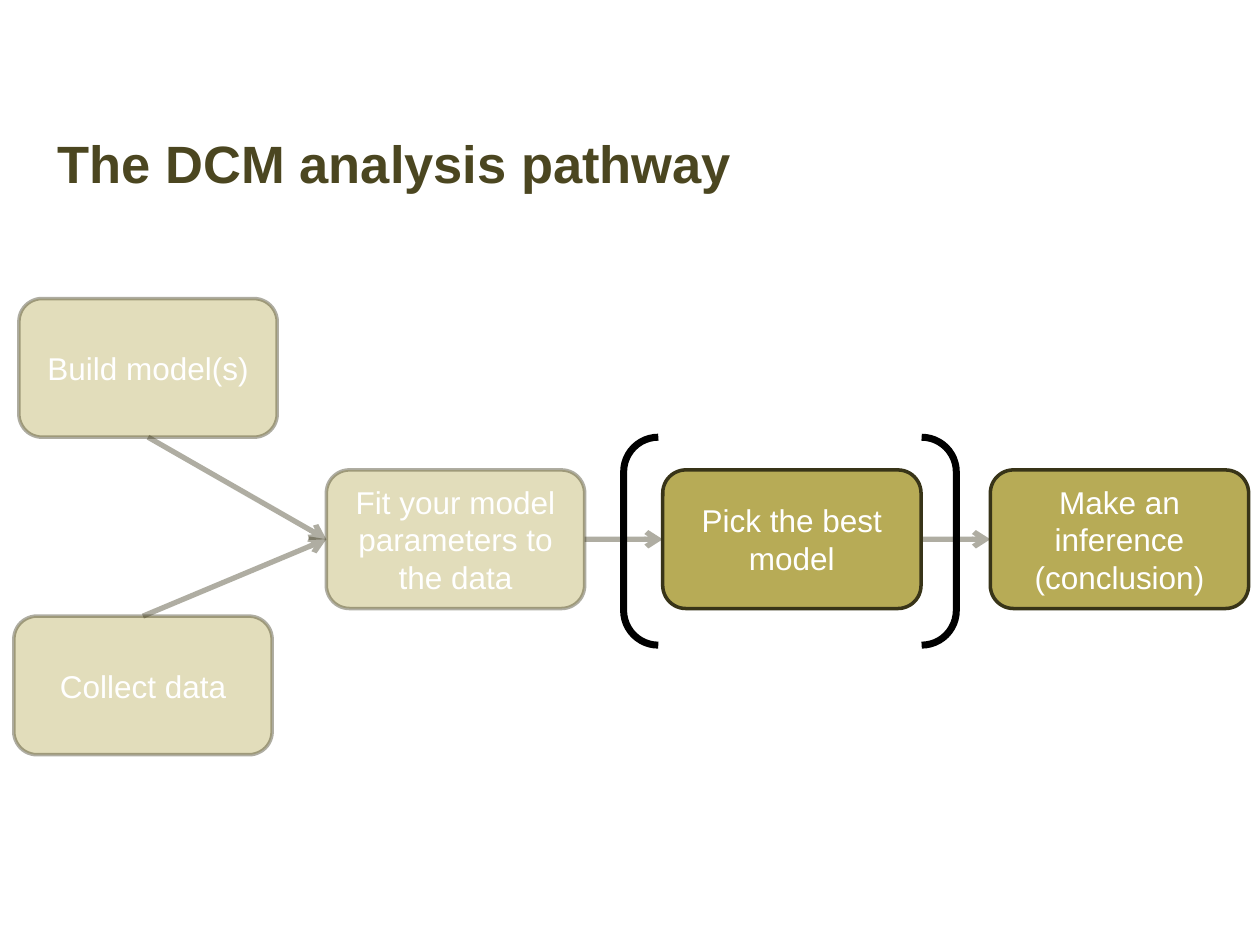
from lxml.etree import SubElement
from pptx import Presentation
from pptx.dml.color import RGBColor
from pptx.enum.shapes import MSO_CONNECTOR as Connector, MSO_SHAPE as Shape
from pptx.enum.text import MSO_ANCHOR as Anchor, PP_ALIGN as Align
from pptx.oxml.ns import qn
from pptx.util import Inches, Pt

TITLE = "The DCM analysis pathway"
COLORS = {"step": "B7AB56", "outline": "383418", "title": "4B4620",
          "text": "FFFFFF", "bracket": "000000"}
FONT = "Arial"
FADED = 40
STEP_WIDTH, STEP_HEIGHT = 2.05, 1.1
STEPS = {
    "collect": ("Collect data", 0.11, 4.89, True),
    "build": ("Build model(s)", 0.15, 2.37, True),
    "fit": ("Fit your model parameters to the data", 2.59, 3.73, True),
    "pick": ("Pick the best model", 5.26, 3.73, False),
    "infer": ("Make an inference (conclusion)", 7.86, 3.73, False),
}
TOP, LEFT, BOTTOM, RIGHT = range(4)
ARROWS = [("collect", TOP, "fit"), ("build", BOTTOM, "fit"),
          ("pick", RIGHT, "infer"), ("fit", RIGHT, "pick")]
BRACKET = (4.95, 3.47, 2.64, 1.65)


def rgb(name):
    return RGBColor.from_string(COLORS[name])


def fade(shape):
    for color in shape._element.spPr.iter(qn("a:srgbClr")):
        SubElement(color, qn("a:alpha"), val=str(FADED * 1000))


def set_line(shape, color, width):
    shape.line.color.rgb = rgb(color)
    shape.line.width = Pt(width)


def set_font(paragraph, size, color, bold=False):
    for run in paragraph.runs:
        run.font.name = FONT
        run.font.size = Pt(size)
        run.font.bold = bold
        run.font.color.rgb = rgb(color)


def add_title(slide):
    title = slide.shapes.title
    title.left, title.top = Inches(0.36), Inches(0.99)
    title.width, title.height = Inches(9.28), Inches(1.42)
    text_frame = title.text_frame
    text_frame.text = TITLE
    text_frame.vertical_anchor = Anchor.TOP
    paragraph = text_frame.paragraphs[0]
    paragraph.alignment = Align.LEFT
    set_font(paragraph, 30, "title", True)


def add_step(slide, text, left, top, faded):
    shape = slide.shapes.add_shape(
        Shape.ROUNDED_RECTANGLE, Inches(left), Inches(top),
        Inches(STEP_WIDTH), Inches(STEP_HEIGHT))
    shape.shadow.inherit = False
    shape.fill.solid()
    shape.fill.fore_color.rgb = rgb("step")
    set_line(shape, "outline", 2)
    if faded:
        fade(shape)
    text_frame = shape.text_frame
    text_frame.text = text
    text_frame.word_wrap = True
    text_frame.vertical_anchor = Anchor.MIDDLE
    paragraph = text_frame.paragraphs[0]
    paragraph.alignment = Align.CENTER
    set_font(paragraph, 18, "text")
    return shape


def add_arrow(slide, start, side, end):
    arrow = slide.shapes.add_connector(Connector.STRAIGHT, 0, 0, 0, 0)
    arrow.begin_connect(start, side)
    arrow.end_connect(end, LEFT)
    set_line(arrow, "outline", 3)
    fade(arrow)
    SubElement(arrow.line._get_or_add_ln(), qn("a:tailEnd"), type="arrow")
    SubElement(arrow._element.spPr, qn("a:effectLst"))


def add_bracket(slide):
    bracket = slide.shapes.add_shape(
        Shape.DOUBLE_BRACKET, *(Inches(length) for length in BRACKET))
    bracket.shadow.inherit = False
    bracket.fill.background()
    set_line(bracket, "bracket", 4)


def main():
    presentation = Presentation()
    presentation.slide_width, presentation.slide_height = Inches(10), Inches(7.5)
    slide = presentation.slides.add_slide(presentation.slide_layouts[5])
    add_title(slide)
    steps = {name: add_step(slide, *step) for name, step in STEPS.items()}
    for start, side, end in ARROWS:
        add_arrow(slide, steps[start], side, steps[end])
    add_bracket(slide)
    presentation.save("out.pptx")


if __name__ == "__main__":
    main()
